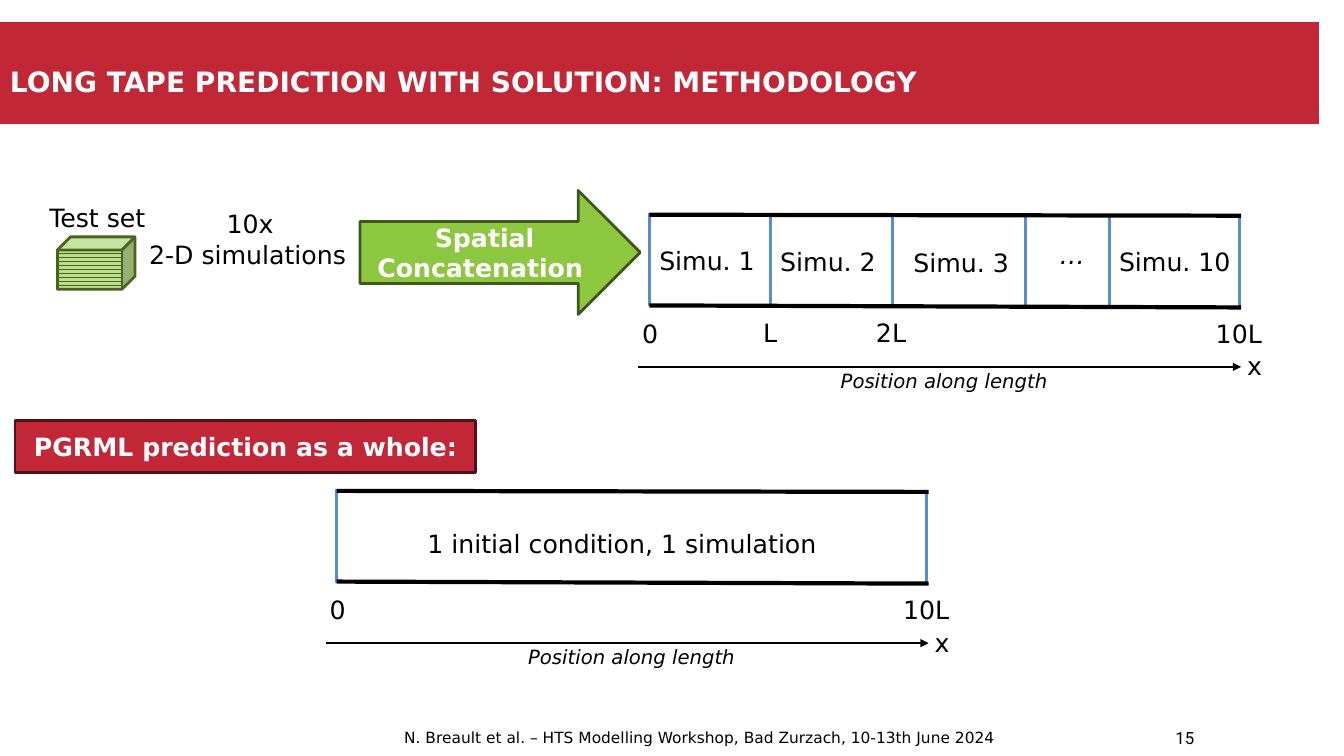
from dataclasses import dataclass

import pptx
import pptx.dml.color
import pptx.enum.shapes
import pptx.enum.text
import pptx.oxml
import pptx.oxml.ns
import pptx.util
from pptx.util import Inches

ALIGN = pptx.enum.text.PP_ALIGN
SHAPE = pptx.enum.shapes.MSO_SHAPE
FONT = "DejaVu Sans"
RED, BLACK, WHITE = "C12736", "000000", "FFFFFF"
BLUE, DARK_GREEN = "558ED5", "47651E"


@dataclass
class Label:
    text: str
    x: float
    y: float
    w: float
    h: float = 0.4
    size: float = 18
    color: str = BLACK
    bold: bool = False
    italic: bool = False
    align: ALIGN = ALIGN.LEFT
    wrap: bool = False
    middle: bool = False
    font: str = FONT


@dataclass
class Box:
    kind: SHAPE
    x: float
    y: float
    w: float
    h: float
    fill: str
    line: str = ""
    text: str = ""


@dataclass
class Wall:
    x: float
    top: float
    bottom: float


@dataclass
class Tape:
    dx: float
    dy: float
    walls: list[Wall]
    labels: list[Label]


def rgb(value: str) -> pptx.dml.color.RGBColor:
    return pptx.dml.color.RGBColor.from_string(value)


def write(tf, text: str, size: float, color: str, bold: bool, italic: bool,
          align: ALIGN, font: str) -> None:
    for i, line in enumerate(text.split("\n")):
        p = tf.add_paragraph() if i else tf.paragraphs[0]
        p.text = line
        p.alignment = align
        p.font.name = font
        p.font.size = pptx.util.Pt(size)
        p.font.bold = bold
        p.font.italic = italic
        p.font.color.rgb = rgb(color)


def add_label(s, label: Label, dx: float = 0, dy: float = 0):
    sp = s.shapes.add_textbox(Inches(label.x + dx), Inches(label.y + dy),
                              Inches(label.w), Inches(label.h))
    tf = sp.text_frame
    tf.word_wrap = label.wrap
    if label.middle:
        tf.vertical_anchor = pptx.enum.text.MSO_ANCHOR.MIDDLE
    write(tf, label.text, label.size, label.color, label.bold, label.italic,
          label.align, label.font)
    return tf


def add_box(s, box: Box) -> None:
    sp = s.shapes.add_shape(box.kind, Inches(box.x), Inches(box.y),
                            Inches(box.w), Inches(box.h))
    sp.shadow.inherit = False
    sp.fill.solid()
    sp.fill.fore_color.rgb = rgb(box.fill)
    if box.line:
        sp.line.color.rgb = rgb(box.line)
        sp.line.width = pptx.util.Pt(2)
    else:
        sp.line.fill.background()
    if box.text:
        tf = sp.text_frame
        tf.word_wrap = True
        tf.vertical_anchor = pptx.enum.text.MSO_ANCHOR.MIDDLE
        write(tf, box.text, 18, WHITE, True, False, ALIGN.CENTER, FONT)


def add_line(s, x1: float, y1: float, x2: float, y2: float, color: str,
             width: float, arrow: bool = False) -> None:
    sp = s.shapes.add_connector(pptx.enum.shapes.MSO_CONNECTOR.STRAIGHT,
                                Inches(x1), Inches(y1), Inches(x2), Inches(y2))
    sp.line.color.rgb = rgb(color)
    sp.line.width = pptx.util.Pt(width)
    if arrow:
        tail = pptx.oxml.parse_xml(
            f'<a:tailEnd {pptx.oxml.ns.nsdecls("a")} type="triangle"/>')
        sp.line._get_or_add_ln().append(tail)
    sp._element.spPr.append(pptx.oxml.parse_xml(
        f'<a:effectLst {pptx.oxml.ns.nsdecls("a")}/>'))


def add_tape(s, tape: Tape) -> None:
    dx, dy = tape.dx, tape.dy
    for wall in tape.walls:
        add_line(s, wall.x + dx, wall.top + dy, wall.x + dx, wall.bottom + dy,
                 BLUE, 2.25)
    for y1, y2 in ((2.13, 2.14), (3.03, 3.05)):
        add_line(s, 6.44 + dx, y1 + dy, 12.31 + dx, y2 + dy, BLACK, 3)
    add_line(s, 6.33 + dx, 3.64 + dy, 12.31 + dx, 3.64 + dy, BLACK, 1.5, True)
    for label in AXIS_LABELS + tape.labels:
        add_label(s, label, dx, dy)


AXIS_LABELS = [
    Label("0", 6.27, 3.11, 0.36),
    Label("10L", 11.96, 3.11, 0.66),
    Label("x", 12.27, 3.43, 0.35),
    Label("Position along length", 8.24, 3.61, 2.27, 0.34, 14, italic=True),
]

FIRST_WALL, LAST_WALL = Wall(6.44, 2.11, 3.04), Wall(12.29, 2.13, 3.05)

TAPES = [
    Tape(0, 0,
         [FIRST_WALL, Wall(7.64, 2.11, 3.04), Wall(8.85, 2.13, 3.05),
          Wall(10.17, 2.14, 3.03), Wall(11, 2.14, 3.06), LAST_WALL],
         [Label("Simu. 1", 6.44, 2.38, 1.51, wrap=True),
          Label("Simu. 2", 7.64, 2.39, 1.51, wrap=True),
          Label("Simu. 3", 8.96, 2.4, 1.51, wrap=True),
          Label("…", 10.41, 2.33, 0.41, italic=True),
          Label("Simu. 10", 11, 2.39, 1.51, wrap=True),
          Label("L", 7.47, 3.1, 0.34),
          Label("2L", 8.59, 3.1, 0.5)]),
    Tape(-3.1, 2.74,
         [FIRST_WALL, LAST_WALL],
         [Label("1 initial condition, 1 simulation", 7.24, 2.45, 4.31, wrap=True)]),
]

BOXES = [
    Box(SHAPE.RECTANGLE, 0, 0.22, 13.08, 1.01, RED),
    Box(SHAPE.CUBE, 0.57, 2.35, 0.77, 0.52, "BBDD8C", DARK_GREEN),
    Box(SHAPE.RIGHT_ARROW, 3.57, 1.89, 2.78, 1.23, "8DC63F", "3E571C",
        "Spatial\nConcatenation "),
    Box(SHAPE.RECTANGLE, 0.15, 4.17, 4.57, 0.52, RED, "551118",
        "PGRML prediction as a whole:"),
]

LABELS = [
    Label("LONG TAPE PREDICTION WITH SOLUTION: METHODOLOGY", 0, 0.18, 9.44, 1.25,
          20, WHITE, bold=True, wrap=True, middle=True),
    Label("15", 11.56, 7.17, 0.56, 0.33, 12, wrap=True, font="Roboto"),
    Label("N. Breault et al. – HTS Modelling Workshop, Bad Zurzach, 10-13th June 2024",
          2.22, 7.17, 9.44, 0.33, 11, align=ALIGN.CENTER, wrap=True),
    Label("Test set", 0.39, 1.96, 1.18),
]


def main() -> None:
    prs = pptx.Presentation()
    prs.slide_width, prs.slide_height = Inches(13.33), Inches(7.5)
    s = prs.slides.add_slide(prs.slide_layouts[6])
    for box in BOXES:
        add_box(s, box)
    for i in range(9):
        y = 2.52 + i * 0.31 / 8
        add_line(s, 0.57, y, 1.21, y, DARK_GREEN, 0.75)
    for label in LABELS:
        add_label(s, label)
    tf = add_label(s, Label("10x\n2-D simulations", 1.38, 2.02, 2.2, 0.71))
    tf.paragraphs[0].alignment = ALIGN.CENTER
    for tape in TAPES:
        add_tape(s, tape)
    prs.save("out.pptx")


if __name__ == "__main__":
    main()
